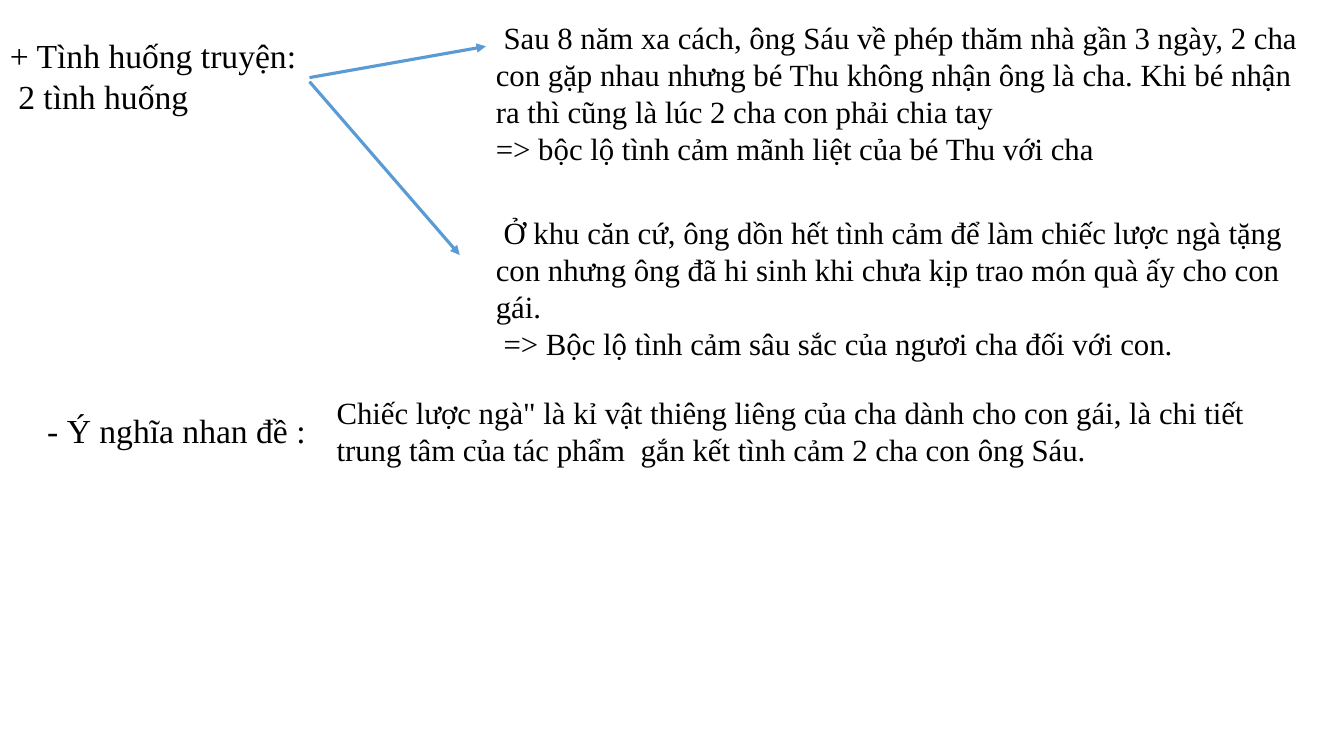
import pptx
import pptx.util
import pptx.dml.color
import pptx.enum.shapes
import pptx.enum.text
from lxml import etree
from pptx.util import Inches

NS = "http://schemas.openxmlformats.org/drawingml/2006/main"


def color(code):
    return pptx.dml.color.RGBColor.from_string(code)


deck = pptx.Presentation()
deck.slide_width = Inches(13.33)
deck.slide_height = Inches(7.5)
slide = deck.slides.add_slide(deck.slide_layouts[6])

# Left, top, width, height, text size, paragraphs
notes = [
    (0, 0.3, 3.51, 1.21, 24, ["+ Tình huống truyện:", " 2 tình huống"]),
    (4.82, 0.14, 8.26, 1.88, 22, [
        " Sau 8 năm xa cách, ông Sáu về phép thăm nhà gần 3 ngày, 2 cha con "
        "gặp nhau nhưng bé Thu không nhận ông là cha. Khi bé nhận ra thì "
        "cũng là lúc 2 cha con phải chia tay",
        "=> bộc lộ tình cảm mãnh liệt của bé Thu với cha"]),
    (4.82, 2.07, 8.16, 1.95, 22, [
        " Ở khu căn cứ, ông dồn hết tình cảm để làm chiếc lược ngà tặng con "
        "nhưng ông đã hi sinh khi chưa kịp trao món quà ấy cho con gái.",
        " => Bộc lộ tình cảm sâu sắc của ngươi cha đối với con."]),
    (0.37, 4.02, 3.14, 0.5, 24, ["- Ý nghĩa nhan đề :"]),
    (3.24, 3.86, 9.84, 1.21, 22, [
        "Chiếc lược ngà\" là kỉ vật thiêng liêng của cha dành cho con gái, là "
        "chi tiết trung tâm của tác phẩm  gắn kết tình cảm 2 cha con ông Sáu."]),
]
for left, top, width, height, size, lines in notes:
    box = slide.shapes.add_textbox(
        Inches(left), Inches(top), Inches(width), Inches(height))
    frame = box.text_frame
    frame.word_wrap = True
    frame.auto_size = pptx.enum.text.MSO_AUTO_SIZE.SHAPE_TO_FIT_TEXT
    frame.text = "\n".join(lines)
    for para in frame.paragraphs:
        para.font.name = "Times New Roman"
        para.font.size = pptx.util.Pt(size)
        para.font.color.rgb = color("000000")

# Arrows from the heading to the two situations
for start, end in [((3.07, 0.77), (4.82, 0.46)), ((3.07, 0.81), (4.56, 2.53))]:
    arrow = slide.shapes.add_connector(
        pptx.enum.shapes.MSO_CONNECTOR.STRAIGHT,
        *[Inches(value) for value in start + end])
    arrow.line.color.rgb = color("5B9BD5")
    arrow.line.width = pptx.util.Pt(2.25)
    props = arrow.element.spPr
    etree.SubElement(props.find(f"{{{NS}}}ln"), f"{{{NS}}}tailEnd", type="triangle")
    etree.SubElement(props, f"{{{NS}}}effectLst")

deck.save("out.pptx")
